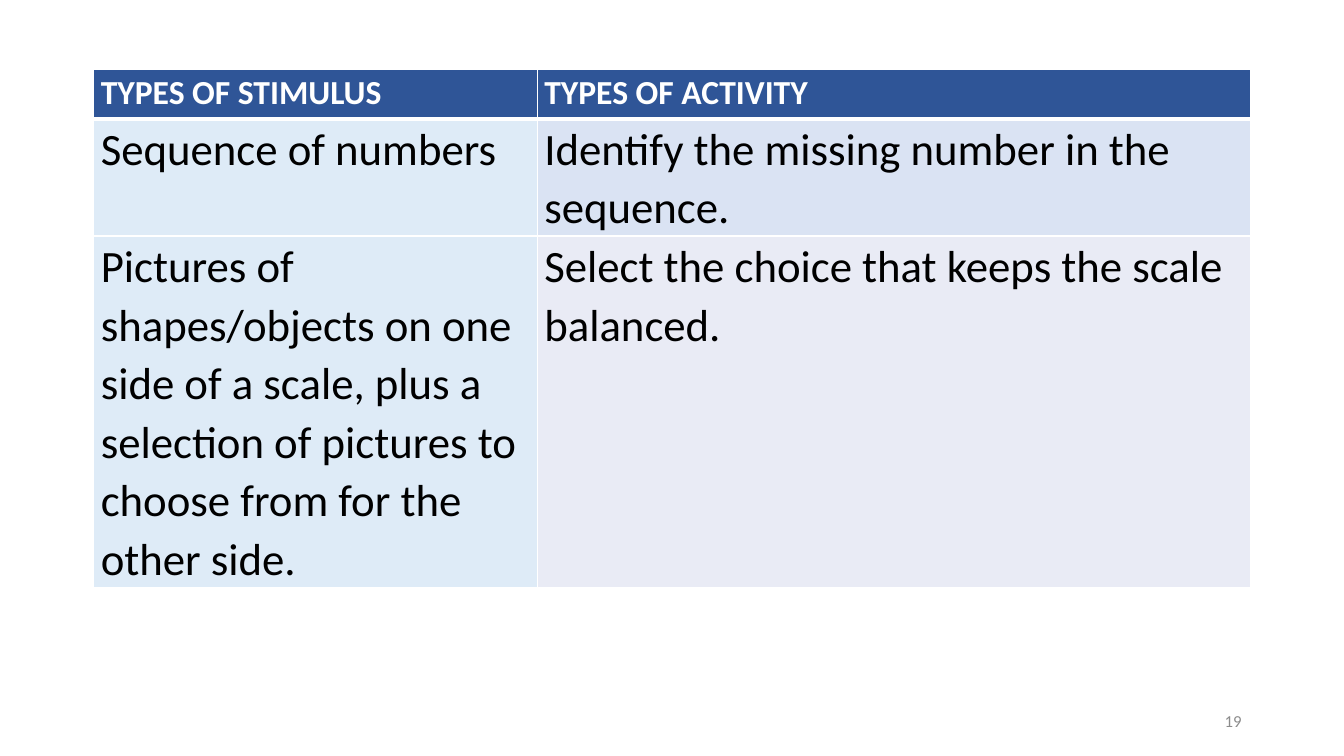
from lxml.etree import SubElement
from pptx import Presentation
from pptx.dml.color import RGBColor
from pptx.enum.text import MSO_ANCHOR, PP_ALIGN
from pptx.oxml.ns import qn
from pptx.util import Pt

FONT = "Calibri"
WHITE = RGBColor(0xFF, 0xFF, 0xFF)
BLACK = RGBColor(0x00, 0x00, 0x00)
GRAY = RGBColor(0x8C, 0x8C, 0x8C)
NAVY = RGBColor(0x2F, 0x55, 0x97)
ICE = RGBColor(0xDE, 0xEB, 0xF7)
SKY = RGBColor(0xDA, 0xE3, 0xF3)
LAVENDER = RGBColor(0xE9, 0xEB, 0xF5)

COLUMN_WIDTHS = (316.8, 509.76)
ROW_HEIGHTS = (35.28, 83.5, 250.5)
ROWS = (
    (("TYPES OF STIMULUS", NAVY), ("TYPES OF ACTIVITY", NAVY)),
    (
        ("Sequence of numbers", ICE),
        ("Identify the missing number in the sequence.", SKY),
    ),
    (
        (
            "Pictures of shapes/objects on one side of a scale, plus a "
            "selection of pictures to choose from for the other side.",
            ICE,
        ),
        ("Select the choice that keeps the scale balanced.", LAVENDER),
    ),
)


def add_span(para, text, size, color, bold=False):
    span = para.add_run()
    span.text = text
    span.font.name = FONT
    span.font.size = Pt(size)
    span.font.bold = bold
    span.font.color.rgb = color


def set_borders(cell, top, bottom):
    properties = cell._tc.get_or_add_tcPr()
    widths = (("a:lnL", 1), ("a:lnR", 1), ("a:lnT", top), ("a:lnB", bottom))
    for position, (side, width) in enumerate(widths):
        line = SubElement(properties, qn(side), w=str(Pt(width)))
        fill = SubElement(line, qn("a:solidFill"))
        SubElement(fill, qn("a:srgbClr"), val=str(WHITE))
        properties.insert(position, line)


def fill_cell(cell, text, color, row_number):
    is_header = row_number == 0
    cell.fill.solid()
    cell.fill.fore_color.rgb = color
    cell.margin_left = cell.margin_right = Pt(5.04)
    cell.margin_top = cell.margin_bottom = Pt(0)
    para = cell.text_frame.paragraphs[0]
    para.line_spacing = 1.07
    para.space_after = Pt(8)
    add_span(para, text, 24 if is_header else 32,
             WHITE if is_header else BLACK, is_header)
    set_borders(cell, 3 if row_number == 1 else 1, 3 if is_header else 1)


def add_activity_table(page):
    frame = page.shapes.add_table(
        len(ROWS), len(COLUMN_WIDTHS), Pt(66.96), Pt(49.6),
        Pt(sum(COLUMN_WIDTHS)), Pt(sum(ROW_HEIGHTS)))
    table = frame.table
    for column, width in zip(table.columns, COLUMN_WIDTHS):
        column.width = Pt(width)
    for row, height in zip(table.rows, ROW_HEIGHTS):
        row.height = Pt(height)
    for row_number, entries in enumerate(ROWS):
        for column_number, (text, color) in enumerate(entries):
            fill_cell(table.cell(row_number, column_number), text, color,
                      row_number)


def add_page_number(page, number):
    box = page.shapes.add_textbox(Pt(678), Pt(500.5), Pt(216), Pt(28.75))
    box.text_frame.word_wrap = True
    box.text_frame.vertical_anchor = MSO_ANCHOR.MIDDLE
    para = box.text_frame.paragraphs[0]
    para.alignment = PP_ALIGN.RIGHT
    add_span(para, number, 12, GRAY)


def main():
    deck = Presentation()
    deck.slide_width = Pt(960)
    deck.slide_height = Pt(540)
    page = deck.slides.add_slide(deck.slide_layouts[6])
    add_activity_table(page)
    add_page_number(page, "19")
    deck.save("out.pptx")


if __name__ == "__main__":
    main()
